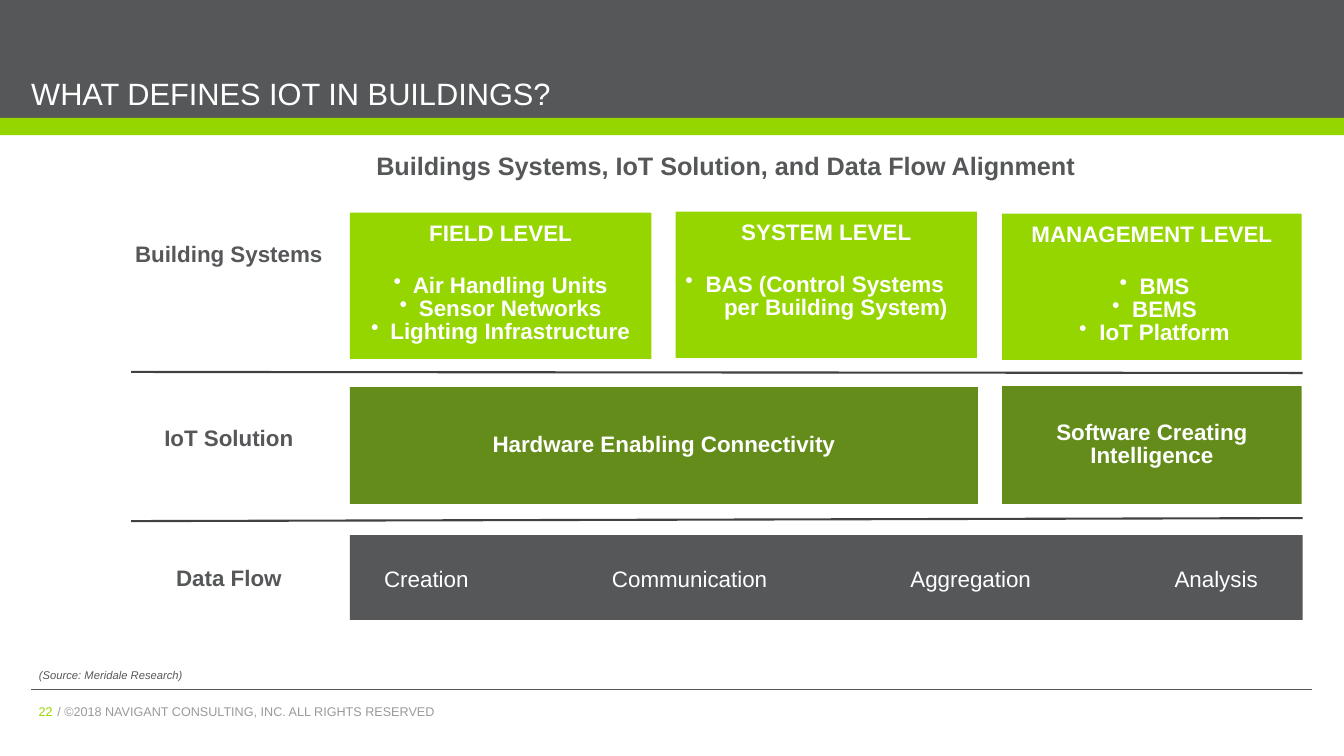
"""Build the slide on what defines IoT in buildings."""
import pptx
import pptx.util
import pptx.dml.color
import pptx.enum.shapes
import pptx.enum.text
from lxml import etree
from pptx.util import Inches, Pt

RGBColor = pptx.dml.color.RGBColor
ALIGN = pptx.enum.text.PP_ALIGN
ANCHOR = pptx.enum.text.MSO_ANCHOR
GREY = RGBColor(0x55, 0x57, 0x59)
LIME = RGBColor(0x95, 0xD6, 0x00)
OLIVE = RGBColor(0x64, 0x8C, 0x1A)
CHARCOAL = RGBColor(0x40, 0x41, 0x43)
SILVER = RGBColor(0x98, 0x9A, 0x9D)
WHITE = RGBColor(0xFF, 0xFF, 0xFF)
LINE_SPACING = 0.86

TITLE = "WHAT DEFINES IOT IN BUILDINGS?"
HEADING = "Buildings Systems, IoT Solution, and Data Flow Alignment"
SOURCE = "(Source: Meridale Research)"
PAGE = "22"
COPYRIGHT = "/ ©2018 NAVIGANT CONSULTING, INC. ALL RIGHTS RESERVED"
ROW_LABELS = [("Building Systems", 2.37), ("IoT Solution", 4.2), ("Data Flow", 5.59)]
# Each level: name, box, entries as (text, alignment, margin, indent)
LEVELS = [
    ("FIELD LEVEL", (3.47, 2.11, 2.99, 1.45), [
        (entry, ALIGN.CENTER, 0.19, -0.19)
        for entry in ("Air Handling Units", "Sensor Networks", "Lighting Infrastructure")]),
    ("SYSTEM LEVEL", (6.7, 2.1, 2.99, 1.45), [
        ("BAS (Control Systems", ALIGN.LEFT, 0.2, -0.2),
        ("per Building System)", ALIGN.CENTER, 0.19, 0)]),
    ("MANAGEMENT LEVEL", (9.94, 2.12, 2.97, 1.45), [
        (entry, ALIGN.CENTER, 0.25, -0.2) for entry in ("BMS", "BEMS", "IoT Platform")]),
]
SOLUTIONS = [
    ("Hardware Enabling Connectivity", (3.47, 3.84, 6.23, 1.16)),
    ("Software Creating Intelligence", (9.94, 3.83, 2.97, 1.17)),
]
DIVIDERS = [(1.3, 3.69, 12.92, 3.7), (1.3, 5.17, 12.92, 5.14)]
STAGES = [("Creation", 3.81, 0.85), ("Communication", 6.07, 1.56),
          ("Aggregation", 9.03, 1.21), ("Analysis", 11.65, 0.83)]


def style(paragraph, text, size, color, align=ALIGN.CENTER, bold=False, spacing=LINE_SPACING):
    """Fill one paragraph and set its font."""
    paragraph.text = text
    paragraph.alignment = align
    paragraph.line_spacing = spacing
    font = paragraph.font
    font.name, font.size, font.bold = "Arial", Pt(size), bold
    font.color.rgb = color


def set_insets(frame, inset):
    """Give a text frame the same inset on all sides."""
    frame.margin_left = frame.margin_right = Inches(inset)
    frame.margin_top = frame.margin_bottom = Inches(inset)


def add_block(slide, box, fill):
    """Add a plain filled rectangle."""
    block = slide.shapes.add_shape(
        pptx.enum.shapes.MSO_SHAPE.RECTANGLE, *map(Inches, box))
    block.shadow.inherit = False
    block.fill.solid()
    block.fill.fore_color.rgb = fill
    block.line.fill.background()
    return block


def add_text(slide, box, text, size, color, wrap=True, inset=None, **look):
    """Add a one-paragraph text box and return the paragraph."""
    frame = slide.shapes.add_textbox(*map(Inches, box)).text_frame
    frame.word_wrap = wrap
    if inset is not None:
        set_insets(frame, inset)
    style(frame.paragraphs[0], text, size, color, **look)
    return frame.paragraphs[0]


def add_rule(slide, ends, color, width):
    """Add a straight line without a shadow."""
    rule = slide.shapes.add_connector(
        pptx.enum.shapes.MSO_CONNECTOR.STRAIGHT, *map(Inches, ends))
    rule.line.color.rgb = color
    rule.line.width = Pt(width)
    etree.SubElement(rule.element.spPr, pptx.oxml.ns.qn("a:effectLst"))


def add_level(slide, name, box, entries):
    """Add a building level with its bulleted entries."""
    frame = add_block(slide, box, LIME).text_frame
    frame.word_wrap = True
    frame.vertical_anchor = ANCHOR.TOP
    set_insets(frame, 0.1)
    style(frame.paragraphs[0], name, 16, WHITE, bold=True)
    frame.paragraphs[0].space_after = Pt(20.5)
    for text, align, margin, indent in entries:
        entry = frame.add_paragraph()
        properties = entry._p.get_or_add_pPr()
        properties.set("marL", str(Inches(margin)))
        properties.set("indent", str(Inches(indent)))
        if indent:
            bullet = etree.SubElement(properties, pptx.oxml.ns.qn("a:buChar"))
            bullet.set("char", "•")
        style(entry, text, 16, WHITE, align=align, bold=True)


def main():
    """Compose and save the slide."""
    deck = pptx.Presentation()
    deck.slide_width, deck.slide_height = Inches(13.33), Inches(7.5)
    slide = deck.slides.add_slide(deck.slide_layouts[5])

    title = slide.shapes.title
    header = add_block(slide, (0, 0, 13.33, 1.17), GREY)
    title.element.addprevious(header.element)
    title.left, title.top, title.width, title.height = map(Inches, (0.31, 0, 12.71, 1.11))
    title.text_frame.vertical_anchor = ANCHOR.BOTTOM
    set_insets(title.text_frame, 0)
    style(title.text_frame.paragraphs[0], TITLE, 22, WHITE, align=ALIGN.LEFT, spacing=1.0)
    add_block(slide, (0, 1.17, 13.33, 0.17), LIME)

    add_rule(slide, (0.31, 6.84, 13.01, 6.84), GREY, 0.75)
    add_text(slide, (0.47, 6.96, 6.37, 0.22), COPYRIGHT, 9, SILVER, align=ALIGN.LEFT)
    add_text(slide, (0.18, 6.96, 0.44, 0.23), PAGE, 9, LIME, align=ALIGN.RIGHT)
    source = add_text(slide, (0.27, 6.6, 1.66, 0.24), SOURCE, 8, GREY, wrap=False)
    source.font.italic = True
    add_text(slide, (3.6, 1.49, 7.2, 0.36), HEADING, 18, GREY, wrap=False, bold=True)

    for label, top in ROW_LABELS:
        add_text(slide, (1.1, top, 2.34, 0.33), label, 16, GREY, bold=True)
    for level in LEVELS:
        add_level(slide, *level)
    for ends in DIVIDERS:
        add_rule(slide, ends, CHARCOAL, 1.5)
    for solution, box in SOLUTIONS:
        frame = add_block(slide, box, OLIVE).text_frame
        frame.word_wrap = True
        frame.vertical_anchor = ANCHOR.MIDDLE
        style(frame.paragraphs[0], solution, 16, WHITE, bold=True)

    add_block(slide, (3.47, 5.31, 9.45, 0.84), GREY)
    for stage, left, width in STAGES:
        add_text(slide, (left, 5.61, width, 0.27), stage, 16, WHITE, wrap=False,
                 inset=0, align=ALIGN.LEFT, spacing=1.0)
    deck.save("out.pptx")


if __name__ == "__main__":
    main()
